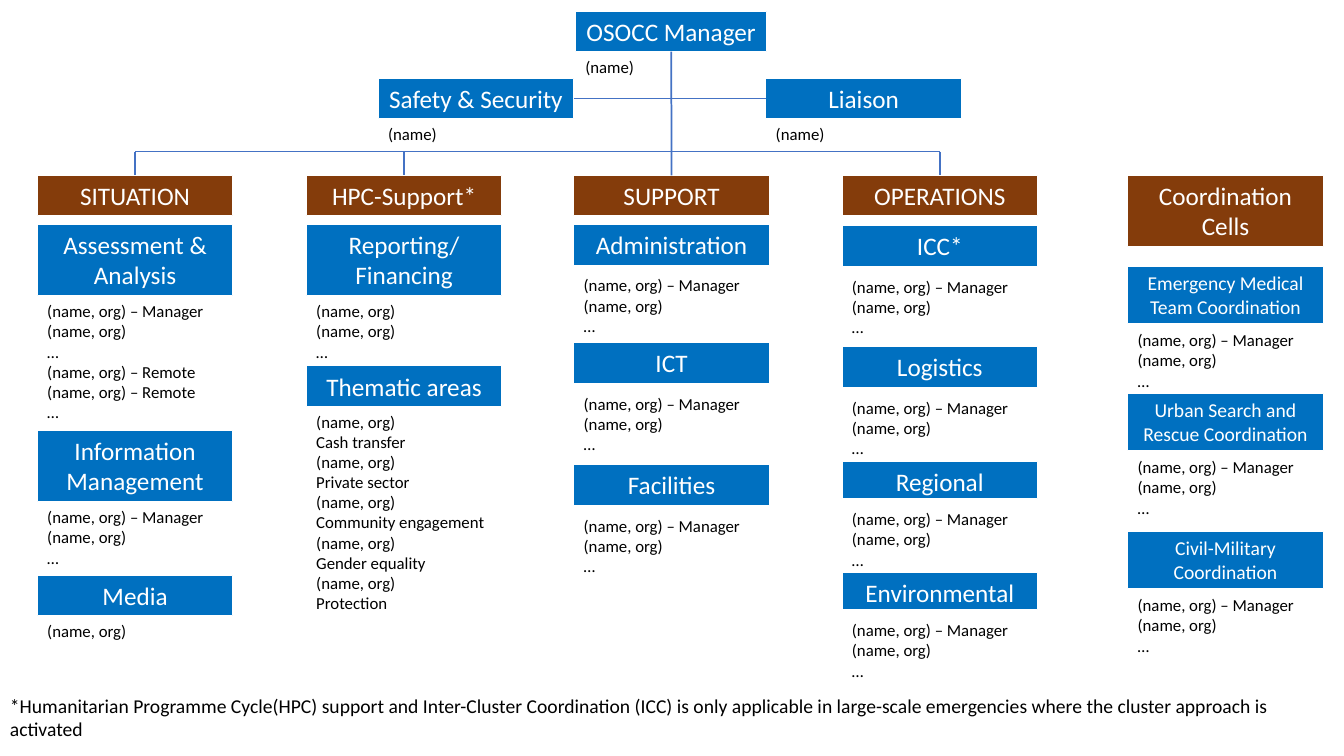
"""Build the OSOCC organisation chart slide."""
from lxml.etree import SubElement
from pptx import Presentation
from pptx.dml.color import RGBColor
from pptx.enum.shapes import MSO_CONNECTOR, MSO_SHAPE
from pptx.enum.text import MSO_ANCHOR, PP_ALIGN
from pptx.oxml.ns import qn
from pptx.util import Cm, Pt

MANAGED = ["(name, org) – Manager", "(name, org)", "…"]
REMOTE = ["(name, org) – Remote", "(name, org) – Remote", "…"]
THEMES = ["Cash transfer", "Private sector", "Community engagement", "Gender equality", "Protection"]

STAFF = [
    ("OSOCC Manager", 14.5, 0.28, 4.83),
    ("Safety & Security", 9.53, 1.97, 4.93),
    ("Liaison", 19.3, 1.97, 4.93),
]
COLUMNS = [
    {"title": "SITUATION", "left": 0.94, "kind": "single", "gap": 0, "units": [
        ("Assessment & Analysis", "double", 5.66, MANAGED + REMOTE),
        ("Information Management", "double", 10.85, MANAGED),
        ("Media", "single", 14.5, ["(name, org)"]),
    ]},
    {"title": "HPC-Support*", "left": 7.72, "kind": "single", "gap": 0, "units": [
        ("Reporting/ Financing", "double", 5.66, ["(name, org)", "(name, org)", "…"]),
        ("Thematic areas", "single", 9.22, [line for theme in THEMES for line in ("(name, org)", theme)]),
    ]},
    {"title": "SUPPORT", "left": 14.46, "kind": "single", "gap": 0.13, "units": [
        ("Administration", "single", 5.66, MANAGED),
        ("ICT", "single", 8.64, MANAGED),
        ("Facilities", "single", 11.71, MANAGED),
    ]},
    {"title": "OPERATIONS", "left": 21.22, "kind": "single", "gap": 0.13, "units": [
        ("ICC*", "single", 5.69, MANAGED),
        ("Logistics", "single", 8.74, MANAGED),
        ("Regional", "short", 11.63, MANAGED),
        ("Environmental", "short", 14.43, MANAGED),
    ]},
    {"title": "Coordination Cells", "left": 28.42, "kind": "double", "gap": 0.03, "units": [
        ("Emergency Medical Team Coordination", "cell", 6.71, MANAGED),
        ("Urban Search and Rescue Coordination", "cell", 9.91, MANAGED),
        ("Civil-Military Coordination", "cell", 13.39, MANAGED),
    ]},
]
FOOTNOTE = (
    "*Humanitarian Programme Cycle(HPC) support and Inter-Cluster Coordination (ICC) is only "
    "applicable in large-scale emergencies where the cluster approach is activated"
)
THEME = {
    "font": "Calibri", "unit": "0070C0", "section": "843C0B", "connector": "4472C4",
    "light": "FFFFFF", "dark": "000000", "title": 18, "cell": 14, "note": 12, "footnote": 14,
    "outline": 0.75, "connector_width": 1.25,
}
BOX_HEIGHT = {"single": 1.02, "double": 1.8, "short": 0.94, "cell": 1.45}
COLUMN_WIDTH, SECTION_TOP, BUS_TOP = 4.93, 4.42, 3.82
NOTE_PADDING, NOTE_LINE = 0.25, 0.51


def write(shape, lines, size, color, alignment, wrap=True):
    """Fill a shape with one paragraph per line."""
    frame = shape.text_frame
    for name, value in {"word_wrap": wrap, "vertical_anchor": MSO_ANCHOR.TOP}.items():
        setattr(frame, name, value)
    frame.text = "\n".join(lines)
    for paragraph in frame.paragraphs:
        paragraph.alignment = alignment
        for name, value in {"name": THEME["font"], "size": Pt(THEME[size])}.items():
            setattr(paragraph.font, name, value)
        paragraph.font.color.rgb = RGBColor.from_string(THEME[color])


def add_box(shapes, title, left, top, width, kind, fill, wrap=True):
    """Add a filled title box."""
    shape = shapes.add_shape(MSO_SHAPE.RECTANGLE, Cm(left), Cm(top), Cm(width), Cm(BOX_HEIGHT[kind]))
    shape.shadow.inherit = False
    shape.fill.solid()
    shape.fill.fore_color.rgb = RGBColor.from_string(THEME[fill])
    shape.line.color.rgb = RGBColor.from_string(THEME["light"])
    shape.line.width = Pt(THEME["outline"])
    write(shape, [title], "cell" if kind == "cell" else "title", "light", PP_ALIGN.CENTER, wrap)
    return shape


def add_text(shapes, lines, left, top, width, height, size):
    """Add a plain left-aligned text box."""
    shape = shapes.add_textbox(Cm(left), Cm(top), Cm(width), Cm(height))
    write(shape, lines, size, "dark", PP_ALIGN.LEFT)


def add_unit(slide, title, left, top, width, kind, lines, gap=0, wrap=True):
    """Group a title box with the names below it."""
    shapes = slide.shapes.add_group_shape().shapes
    box = add_box(shapes, title, left, top, width, kind, "unit", wrap)
    note_top = top + BOX_HEIGHT[kind] + gap
    add_text(shapes, lines, left, note_top, width, NOTE_PADDING + NOTE_LINE * len(lines), "note")
    return box


def add_line(slide, start, end):
    """Add a straight connector between two points."""
    connector = slide.shapes.add_connector(MSO_CONNECTOR.STRAIGHT, *start, *end)
    connector.line.color.rgb = RGBColor.from_string(THEME["connector"])
    connector.line.width = Pt(THEME["connector_width"])
    SubElement(connector._element.spPr, qn("a:effectLst"))
    return connector


def main():
    """Lay out the chart and save it."""
    presentation = Presentation()
    presentation.slide_width, presentation.slide_height = Cm(33.87), Cm(19.05)
    slide = presentation.slides.add_slide(presentation.slide_layouts[6])

    manager, safety, liaison = [
        add_unit(slide, title, left, top, width, "single", ["(name)"], wrap=False)
        for title, left, top, width in STAFF
    ]
    sections = []
    for column in COLUMNS:
        left = column["left"]
        sections.append(add_box(
            slide.shapes, column["title"], left, SECTION_TOP, COLUMN_WIDTH, column["kind"], "section"
        ))
        for title, kind, top, lines in column["units"]:
            add_unit(slide, title, left, top, COLUMN_WIDTH, kind, lines, column["gap"])

    situation, hpc, support, operations, _ = sections
    for first, first_side, second, second_side in [(manager, 2, support, 0), (safety, 3, liaison, 1)]:
        connector = add_line(slide, (0, 0), (0, 0))
        connector.begin_connect(first, first_side)
        connector.end_connect(second, second_side)

    branches = [situation, hpc, operations]
    centers = [section.left + section.width // 2 for section in branches]
    add_line(slide, (centers[0], Cm(BUS_TOP)), (centers[-1], Cm(BUS_TOP)))
    for section, center in zip(branches, centers):
        add_line(slide, (center, Cm(BUS_TOP)), (center, section.top)).end_connect(section, 0)

    add_text(slide.shapes, [FOOTNOTE], 0, 17.35, 33.02, 1.45, "footnote")
    presentation.save("out.pptx")


if __name__ == "__main__":
    main()
